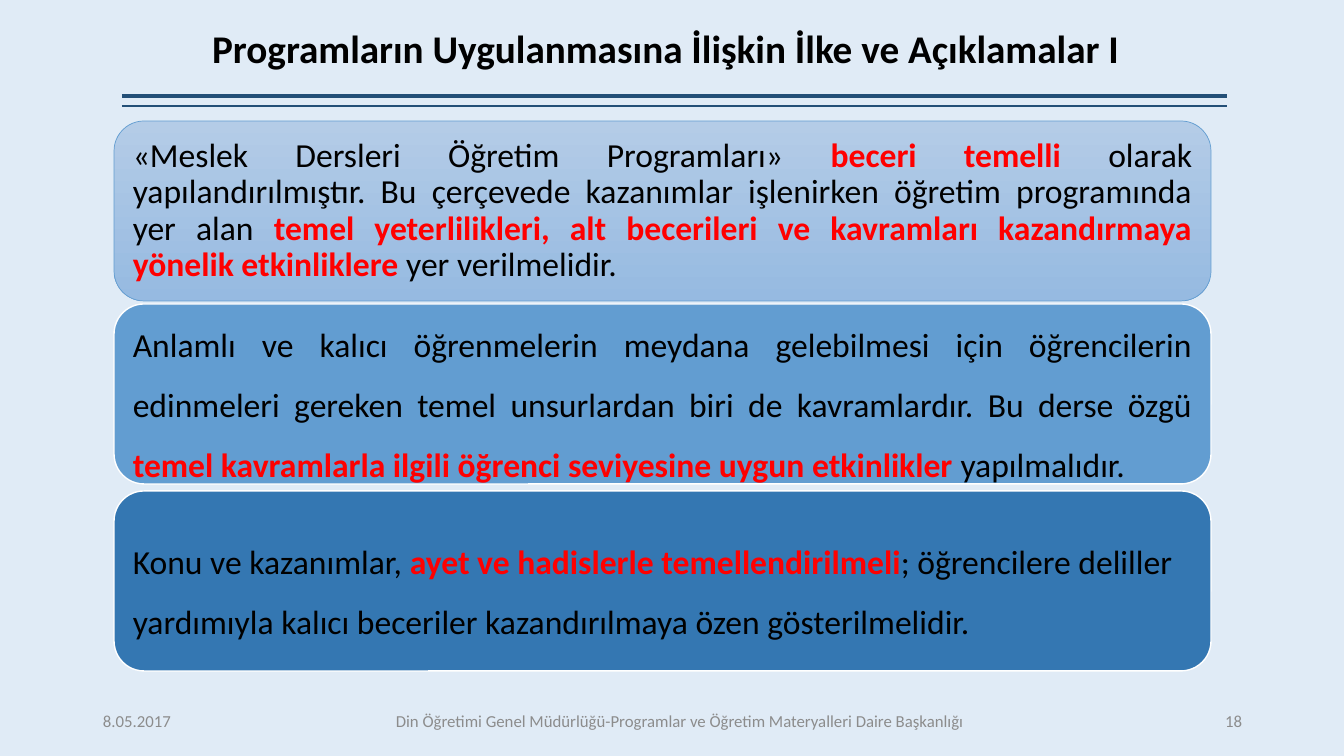
import pptx
import pptx.dml.color
import pptx.enum.shapes
import pptx.enum.text
import pptx.util
from lxml import etree

RGBColor = pptx.dml.color.RGBColor
Align = pptx.enum.text.PP_ALIGN

BACKGROUND = RGBColor(0xE0, 0xEB, 0xF6)
NAVY = RGBColor(0x23, 0x4F, 0x77)
BLACK = RGBColor(0x00, 0x00, 0x00)
GREY = RGBColor(0x8C, 0x8C, 0x8C)
RED = RGBColor(0xFF, 0x00, 0x00)
WHITE = RGBColor(0xFF, 0xFF, 0xFF)
PALE_TOP = RGBColor(0xB4, 0xCC, 0xE7)
PALE_BOTTOM = RGBColor(0x96, 0xBA, 0xE1)
MID_BLUE = RGBColor(0x62, 0x9D, 0xD1)
DEEP_BLUE = RGBColor(0x34, 0x77, 0xB2)

EMU_PER_PX = 914400 / 100.8
DRAWING_NS = "http://schemas.openxmlformats.org/drawingml/2006/main"


def px(*lengths):
    return [pptx.util.Emu(round(length * EMU_PER_PX)) for length in lengths]


def write_text(frame, spans, size, color=BLACK, bold=False, align=Align.LEFT, spacing=1.0):
    """Fill the frame with one paragraph; every second span is red and bold."""
    frame.word_wrap = True
    frame.vertical_anchor = pptx.enum.text.MSO_ANCHOR.MIDDLE
    para = frame.paragraphs[0]
    para.alignment = align
    para.line_spacing = spacing
    for index, text in enumerate(spans):
        stressed = index % 2 == 1
        span = para.add_run()
        span.text = text
        span.font.name = "Calibri"
        span.font.size = pptx.util.Pt(size)
        span.font.bold = bold or stressed
        span.font.color.rgb = RED if stressed else color


class SlideBuilder:
    def __init__(self, deck):
        self.slide = deck.slides.add_slide(deck.slide_layouts[6])
        fill = self.slide.background.fill
        fill.solid()
        fill.fore_color.rgb = BACKGROUND

    def rule(self, left, right, top, weight):
        line = self.slide.shapes.add_connector(
            pptx.enum.shapes.MSO_CONNECTOR.STRAIGHT, *px(left, top, right, top))
        line.line.color.rgb = NAVY
        line.line.width = pptx.util.Pt(weight)
        etree.SubElement(line._element.spPr, f"{{{DRAWING_NS}}}effectLst")

    def label(self, place, text, size, **text_format):
        box = self.slide.shapes.add_textbox(*px(*place))
        write_text(box.text_frame, [text], size, **text_format)

    def panel(self, place, colors, outline, weight, spans, **text_format):
        """Add a rounded panel; two colours give a gradient from top to bottom."""
        box = self.slide.shapes.add_shape(
            pptx.enum.shapes.MSO_SHAPE.ROUNDED_RECTANGLE, *px(*place))
        box.shadow.inherit = False
        if len(colors) == 2:
            box.fill.gradient()
            box.fill.gradient_angle = 270
            for stop, color in zip(box.fill.gradient_stops, colors):
                stop.color.rgb = color
        else:
            box.fill.solid()
            box.fill.fore_color.rgb = colors[0]
        box.line.color.rgb = outline
        box.line.width = pptx.util.Pt(weight)
        frame = box.text_frame
        (inset,) = px(10)
        frame.margin_left = frame.margin_right = inset
        frame.margin_top = frame.margin_bottom = inset
        write_text(frame, spans, 24, **text_format)


def main():
    deck = pptx.Presentation()
    deck.slide_width, deck.slide_height = px(1344, 756)
    builder = SlideBuilder(deck)

    for top, weight in [(96, 3), (106, 1)]:
        builder.rule(122, 1227, top, weight)
    builder.label((128, 19, 1075, 64),
                  "Programların Uygulanmasına İlişkin İlke ve Açıklamalar I",
                  28, bold=True, align=Align.CENTER, spacing=0.9)

    panels = [
        (121, (PALE_TOP, PALE_BOTTOM), MID_BLUE, 0.5, Align.JUSTIFY, 0.9, [
            "«Meslek Dersleri Öğretim Programları» ",
            "beceri temelli",
            " olarak yapılandırılmıştır. Bu çerçevede kazanımlar işlenirken "
            "öğretim programında yer alan ",
            "temel yeterlilikleri, alt becerileri ve kavramları kazandırmaya "
            "yönelik etkinliklere",
            " yer verilmelidir."]),
        (304, (MID_BLUE,), WHITE, 1, Align.JUSTIFY, 1.5, [
            "Anlamlı ve kalıcı öğrenmelerin meydana gelebilmesi için öğrencilerin "
            "edinmeleri gereken temel unsurlardan biri de kavramlardır. Bu derse özgü ",
            "temel kavramlarla ilgili öğrenci seviyesine uygun etkinlikler ",
            "yapılmalıdır."]),
        (491, (DEEP_BLUE,), WHITE, 1, Align.LEFT, 1.5, [
            "Konu ve kazanımlar, ",
            "ayet ve hadislerle temellendirilmeli",
            "; öğrencilere deliller yardımıyla kalıcı beceriler kazandırılmaya "
            "özen gösterilmelidir."]),
    ]
    for top, colors, outline, weight, align, spacing, spans in panels:
        builder.panel((114, top, 1097, 180), colors, outline, weight, spans,
                      align=align, spacing=spacing)

    footers = [
        (93, 126, Align.LEFT, "8.05.2017"),
        (252, 856, Align.CENTER,
         "Din Öğretimi Genel Müdürlüğü-Programlar ve Öğretim Materyalleri Daire Başkanlığı"),
        (1135, 117, Align.RIGHT, "18"),
    ]
    for left, width, align, text in footers:
        builder.label((left, 701, width, 40), text, 12, color=GREY, align=align)

    deck.save("out.pptx")


if __name__ == "__main__":
    main()
